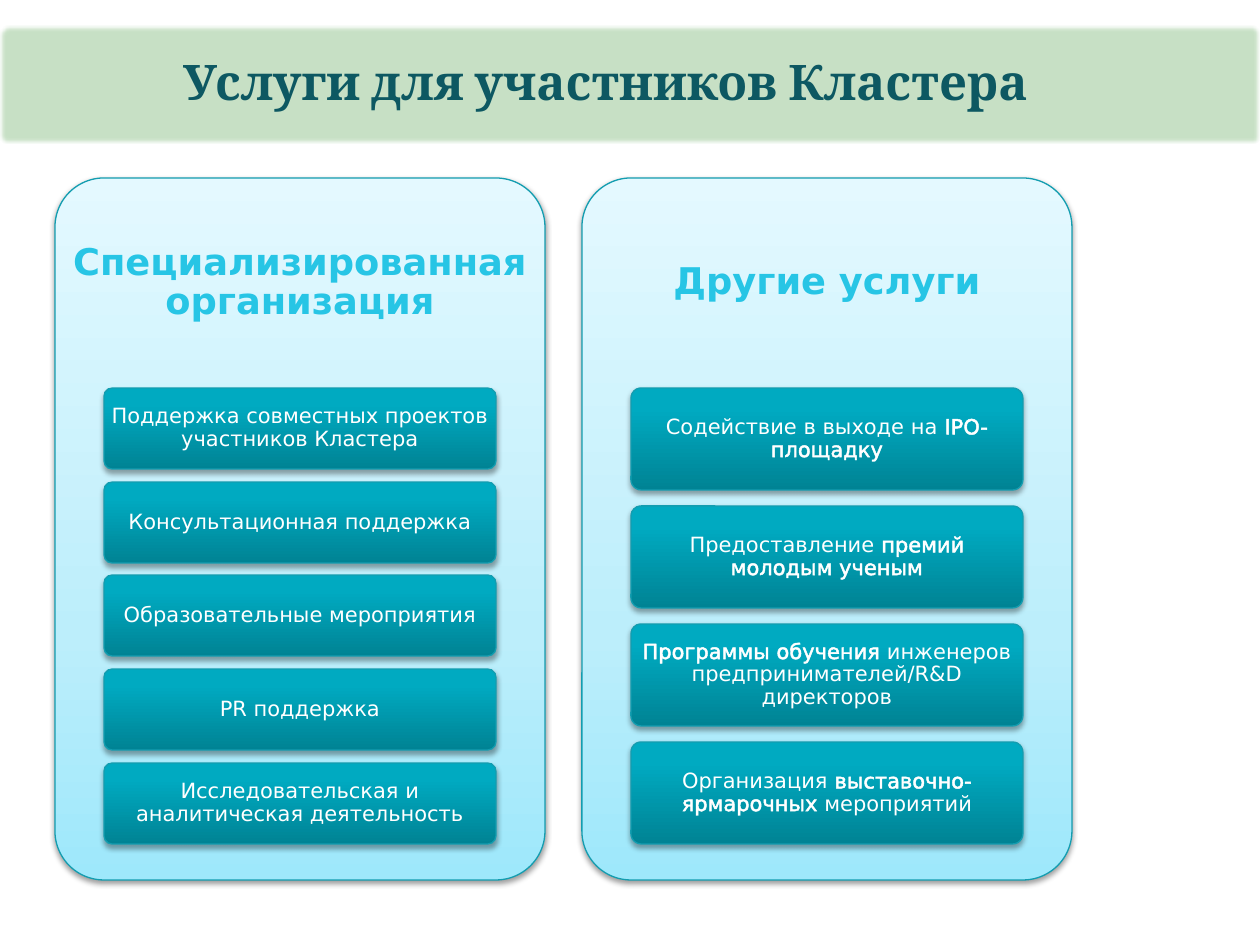
import pptx
import pptx.util
import pptx.oxml
import pptx.oxml.ns
import pptx.dml.color
import pptx.enum.shapes
import pptx.enum.text

PX = 914400 / 126
ROUNDED = pptx.enum.shapes.MSO_SHAPE.ROUNDED_RECTANGLE
MIDDLE = pptx.enum.text.MSO_ANCHOR.MIDDLE
CENTER = pptx.enum.text.PP_ALIGN.CENTER
NS = pptx.oxml.ns.nsdecls("a")
PANEL_STOPS = [(0, "9EE8FB"), (35, "BCEEFB"), (100, "E4F9FF")]
BUTTON_STOPS = [(0, "008394"), (80, "00AAC1"), (100, "00ABC2")]
HEADING_STOPS = [(0, "005763"), (78, "27C5E5"), (100, "EDF8FC")]


def color(value):
    return pptx.dml.color.RGBColor.from_string(value)


def gradient(stops, angle):
    marks = "".join(
        f'<a:gs pos="{place * 1000}"><a:srgbClr val="{value}"/></a:gs>' for place, value in stops
    )
    return pptx.oxml.parse_xml(
        f'<a:gradFill {NS} rotWithShape="1"><a:gsLst>{marks}</a:gsLst>'
        f'<a:lin ang="{angle * 60000}" scaled="0"/></a:gradFill>'
    )


deck = pptx.Presentation()
deck.slide_width = pptx.util.Inches(10)
deck.slide_height = pptx.util.Inches(7.5)
page = deck.slides.add_slide(deck.slide_layouts[5])

banner = page.shapes.add_shape(ROUNDED, 0, round(26 * PX), round(1260 * PX), round(118 * PX))
banner.adjustments[0] = 0.06
banner.fill.solid()
banner.fill.fore_color.rgb = color("92C48F")
banner.fill._xPr.find(".//" + pptx.oxml.ns.qn("a:srgbClr")).append(
    pptx.oxml.parse_xml(f'<a:alpha {NS} val="50000"/>')
)
banner.line.fill.background()
banner.element.spPr.append(
    pptx.oxml.parse_xml(f'<a:effectLst {NS}><a:softEdge rad="31750"/></a:effectLst>')
)

title = page.shapes.title
title.left, title.top, title.width, title.height = [round(n * PX) for n in (105, 45, 1012, 72)]
page.shapes._spTree.append(title.element)
title.text_frame.text = "Услуги для участников Кластера "
title.text_frame.vertical_anchor = MIDDLE
para = title.text_frame.paragraphs[0]
para.alignment = CENTER
para.font.name = "Cambria"
para.font.size = pptx.util.Pt(28)
para.font.bold = True
para.font.color.rgb = color("0D5862")

panels = [
    (55, "Специализированная организация", [
        [("Поддержка совместных проектов участников Кластера", False)],
        [("Консультационная поддержка", False)],
        [("Образовательные мероприятия", False)],
        [("PR поддержка", False)],
        [("Исследовательская и аналитическая деятельность", False)],
    ]),
    (582, "Другие услуги", [
        [("Содействие в выходе на ", False), ("IPO-площадку", True)],
        [("Предоставление ", False), ("премий молодым ученым", True)],
        [("Программы обучения ", True), ("инженеров предпринимателей/R&D директоров", False)],
        [("Организация ", False), ("выставочно-ярмарочных", True), (" мероприятий", False)],
    ]),
]

for left, heading, services in panels:
    count = len(services)
    height = 456 / (count + (count - 1) * 2 / 13)
    pitch = height * 15 / 13
    cards = [(left, 178, 490, 702, PANEL_STOPS, 38, 1.6, [])]
    for row, service in enumerate(services):
        cards.append((left + 49, round(388 + row * pitch), 392, round(height),
                      BUTTON_STOPS, 35, 1.8, service))

    for x, y, width, tall, stops, opacity, distance, spans in cards:
        card = page.shapes.add_shape(ROUNDED, *[round(n * PX) for n in (x, y, width, tall)])
        card.adjustments[0] = 0.1
        card.line.color.rgb = color("139DB0")
        card.line.width = pptx.util.Pt(0.75)
        card.element.spPr.insert(2, gradient(stops, 270))
        card.element.spPr.append(pptx.oxml.parse_xml(
            f'<a:effectLst {NS}><a:outerShdw blurRad="{pptx.util.Pt(3.1)}" '
            f'dist="{pptx.util.Pt(distance)}" dir="5400000" rotWithShape="0">'
            f'<a:srgbClr val="000000"><a:alpha val="{opacity * 1000}"/></a:srgbClr>'
            f'</a:outerShdw></a:effectLst>'
        ))
        frame = card.text_frame
        frame.word_wrap = True
        frame.vertical_anchor = MIDDLE
        frame.margin_left = frame.margin_right = round(3 * PX)
        frame.margin_top = frame.margin_bottom = round(3 * PX)
        para = frame.paragraphs[0]
        para.alignment = CENTER
        para.line_spacing = 0.9
        para.font.name = "DejaVu Sans"
        para.font.size = pptx.util.Pt(12)
        para.font.color.rgb = color("FFFFFF")
        for text, outlined in spans:
            span = para.add_run()
            span.text = text
            if outlined:
                span.font._element.insert(0, pptx.oxml.parse_xml(
                    f'<a:ln {NS} w="{pptx.util.Pt(1.45)}"><a:solidFill>'
                    f'<a:srgbClr val="FFFFFF"/></a:solidFill></a:ln>'
                ))

    box = page.shapes.add_textbox(*[round(n * PX) for n in (left, 178, 490, 210)])
    frame = box.text_frame
    frame.word_wrap = True
    frame.vertical_anchor = MIDDLE
    frame.margin_left = frame.margin_right = round(11 * PX)
    frame.margin_top = frame.margin_bottom = round(11 * PX)
    para = frame.paragraphs[0]
    para.alignment = CENTER
    para.line_spacing = 0.9
    para.font.name = "DejaVu Sans"
    para.font.size = pptx.util.Pt(21)
    para.font.bold = True
    span = para.add_run()
    span.text = heading
    span.font._element.insert(0, gradient(HEADING_STOPS, 90))

deck.save("out.pptx")
